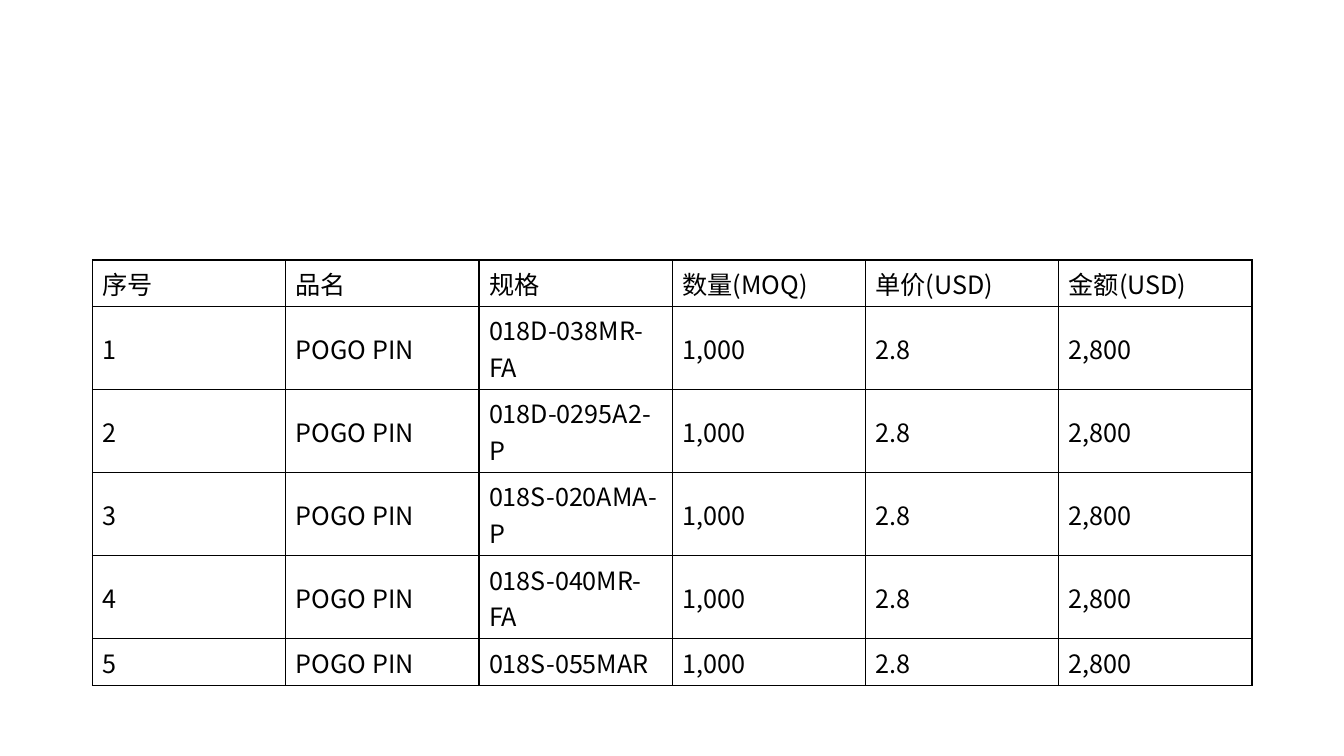
from lxml import etree
from pptx import Presentation
from pptx.dml.color import RGBColor
from pptx.enum.text import MSO_ANCHOR
from pptx.oxml.ns import qn
from pptx.util import Cm, Pt

MIDDLE = MSO_ANCHOR.MIDDLE
FONT = "Noto Sans CJK KR"
BLACK = "000000"

HEADINGS = ["序号", "品名", "规格", "数量(MOQ)", "单价(USD)", "金额(USD)"]
PRODUCT, QUANTITY, PRICE, AMOUNT = "POGO PIN", "1,000", "2.8", "2,800"
PART_NUMBERS = [
    "018D-038MR-FA",
    "018D-0295A2-P",
    "018S-020AMA-P",
    "018S-040MR-FA",
    "018S-055MAR",
]

LEFT, TOP, COLUMN_WIDTH = 2.33, 6.55, 4.87
ONE_LINE, TWO_LINES = 1.17, 2.09
ROW_HEIGHTS = [ONE_LINE] + [TWO_LINES] * 4 + [ONE_LINE]


def color(hex_string):
    return RGBColor.from_string(hex_string)


def add_borders(cell):
    properties = cell._tc.get_or_add_tcPr()
    for position, side in enumerate(("lnL", "lnR", "lnT", "lnB")):
        border = etree.Element(qn(f"a:{side}"), w=str(Pt(1)))
        fill = etree.SubElement(border, qn("a:solidFill"))
        etree.SubElement(fill, qn("a:srgbClr"), val=BLACK)
        properties.insert(position, border)


def fill_cell(cell, text):
    cell.text = text
    cell.vertical_anchor = MIDDLE
    cell.fill.background()
    add_borders(cell)
    paragraph = cell.text_frame.paragraphs[0]
    font = paragraph.font
    font.name = FONT
    font.size = Pt(18)
    font.color.rgb = color(BLACK)
    # East Asian characters take their typeface from a separate element
    latin = font._element.find(qn("a:latin"))
    latin.addnext(etree.Element(qn("a:ea"), typeface=FONT))


def main():
    prs = Presentation()
    prs.slide_width, prs.slide_height = Cm(33.87), Cm(19.05)
    slide = prs.slides.add_slide(prs.slide_layouts[6])

    rows = [HEADINGS] + [
        [str(number), PRODUCT, part, QUANTITY, PRICE, AMOUNT]
        for number, part in enumerate(PART_NUMBERS, 1)
    ]
    quote = slide.shapes.add_table(
        len(rows), len(HEADINGS), Cm(LEFT), Cm(TOP),
        Cm(COLUMN_WIDTH * len(HEADINGS)), Cm(sum(ROW_HEIGHTS)),
    ).table
    quote.first_row = quote.horz_banding = False
    for column in quote.columns:
        column.width = Cm(COLUMN_WIDTH)
    for row, height, texts in zip(quote.rows, ROW_HEIGHTS, rows):
        row.height = Cm(height)
        for cell, text in zip(row.cells, texts):
            fill_cell(cell, text)

    prs.save("out.pptx")


if __name__ == "__main__":
    main()
